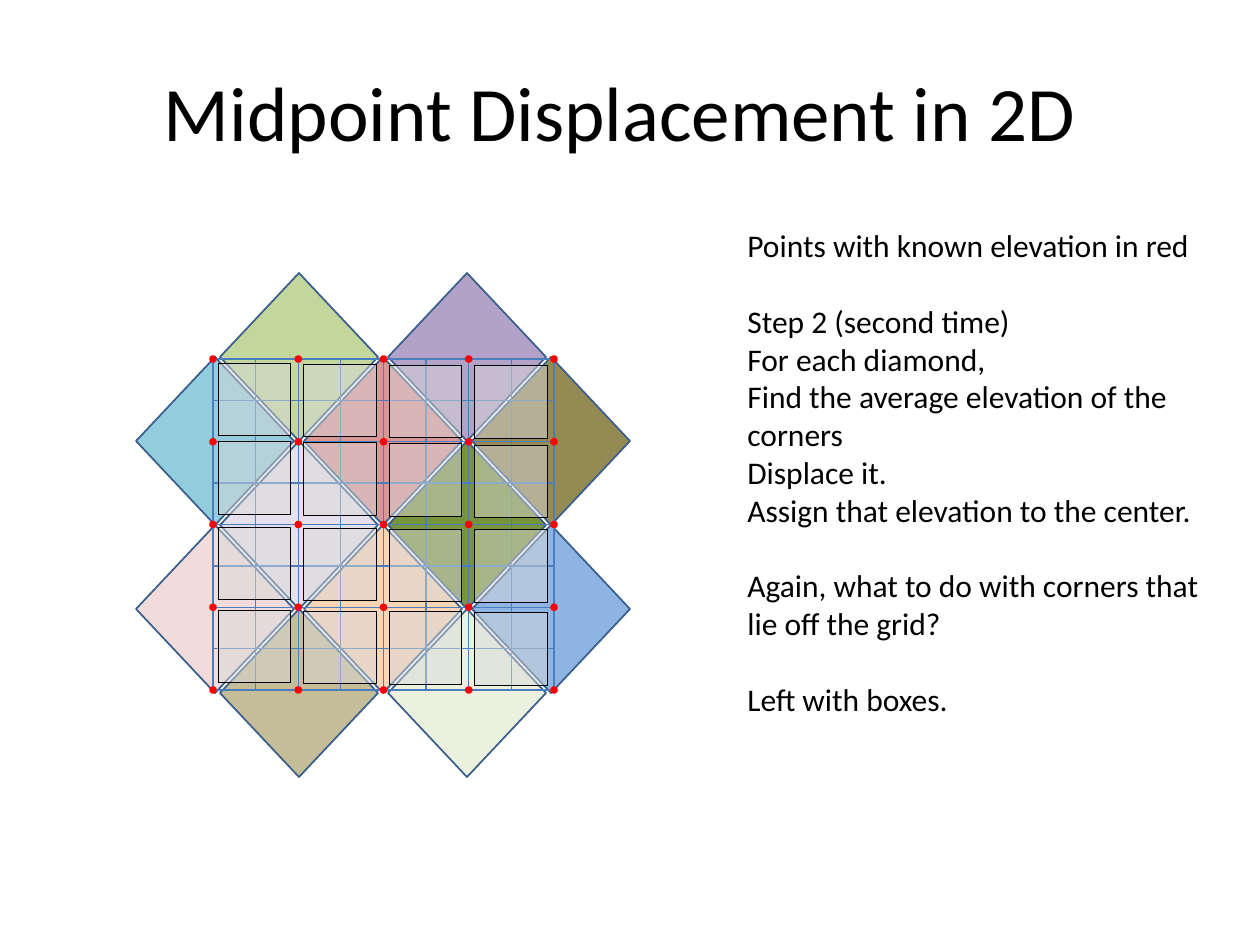
from itertools import product

from lxml.etree import SubElement
from pptx import Presentation
from pptx.dml.color import RGBColor
from pptx.enum.shapes import MSO_CONNECTOR, MSO_SHAPE
from pptx.enum.text import MSO_ANCHOR, MSO_AUTO_SIZE, PP_ALIGN
from pptx.oxml.ns import qn
from pptx.util import Emu, Pt

EMU_PER_PX = 914400 / 126
FONT = "Calibri"
COLORS = {
    "text": "000000",
    "diamond_line": "3A5F8C",
    "grid": "4B7EBC",
    "known": "FF0000",
    "box": "D9D9D9",
    "box_line": "000000",
}

# Column, row and fill of each diamond, from back to front
DIAMONDS = [
    (3, 2, "77933C"), (4, 1, "948A54"), (4, 3, "8EB4E3"), (3, 0, "B3A2C7"),
    (1, 2, "E6E0EC"), (3, 4, "EBF1DE"), (2, 3, "FCD5B5"), (1, 4, "C4BD97"),
    (0, 3, "F2DCDB"), (0, 1, "93CDDD"), (1, 0, "C3D69B"), (2, 1, "D99694"),
]
DIAMOND_LEFT, DIAMOND_TOP, DIAMOND_STEP = 136, 273, 84
DIAMOND_W, DIAMOND_H = 158, 168

GRID_LEFT, GRID_TOP, GRID_RIGHT, GRID_BOTTOM = 213, 359, 554, 690
GRID_CELLS = 8
DOT = 4
BOX = 73
BOX_LEFTS = (218, 304, 389, 475)
BOX_TOPS = (363, 442, 527, 610)

# Each block is set apart from the one before it by one line
STEP_BLOCKS = [
    ["Points with known elevation in red"],
    ["Step 2 (second time)", "For each diamond,",
     "Find the average elevation of the corners", "Displace it.",
     "Assign that elevation to the center."],
    ["Again, what to do with corners that lie off the grid?"],
    ["Left with boxes."],
]


def px(n):
    return Emu(round(n * EMU_PER_PX))


def rgb(color):
    return RGBColor.from_string(color)


def add_shape(shapes, kind, x, y, w, h, fill, line, line_pt, alpha=None):
    """Add a preset shape; alpha is the opacity of its fill in percent."""
    sp = shapes.add_shape(kind, px(x), px(y), px(w), px(h))
    sp.shadow.inherit = False
    sp.fill.solid()
    sp.fill.fore_color.rgb = rgb(fill)
    sp.line.color.rgb = rgb(line)
    sp.line.width = Pt(line_pt)
    if alpha is not None:
        clr = sp._element.spPr.find(qn("a:solidFill")).find(qn("a:srgbClr"))
        SubElement(clr, qn("a:alpha"), val=str(alpha * 1000))


def add_line(shapes, x1, y1, x2, y2):
    ln = shapes.add_connector(MSO_CONNECTOR.STRAIGHT, px(x1), px(y1), px(x2), px(y2))
    ln.line.color.rgb = rgb(COLORS["grid"])
    ln.line.width = Pt(0.75)
    SubElement(ln._element.spPr, qn("a:effectLst"))


def add_text_frame(s, x, y, w, h):
    tf = s.shapes.add_textbox(px(x), px(y), px(w), px(h)).text_frame
    tf.word_wrap = True
    return tf


def write(p, text, size):
    p.text = text
    font = p.runs[0].font
    font.name, font.size = FONT, Pt(size)
    font.color.rgb = rgb(COLORS["text"])


def add_title(s):
    tf = add_text_frame(s, 53, 32, 1134, 157)
    tf.vertical_anchor = MSO_ANCHOR.MIDDLE
    p = tf.paragraphs[0]
    write(p, "Midpoint Displacement in 2D", 44)
    p.alignment = PP_ALIGN.CENTER


def add_steps(s):
    tf = add_text_frame(s, 735, 220, 504, 509)
    tf.auto_size = MSO_AUTO_SIZE.SHAPE_TO_FIT_TEXT
    p = tf.paragraphs[0]
    for b, block in enumerate(STEP_BLOCKS):
        for i, text in enumerate(block):
            if b or i:
                p = tf.add_paragraph()
            write(p, text, 18)
            if b and i == 0:
                p.space_before = Pt(21.6)


def add_diamonds(s):
    for col, row, fill in DIAMONDS:
        add_shape(s.shapes, MSO_SHAPE.DIAMOND, DIAMOND_LEFT + col * DIAMOND_STEP,
                  DIAMOND_TOP + row * DIAMOND_STEP, DIAMOND_W, DIAMOND_H,
                  fill, COLORS["diamond_line"], 1)


def add_grid(s):
    """Grid lines, with a known point on every second crossing."""
    shapes = s.shapes.add_group_shape().shapes
    xs = [GRID_LEFT + i * (GRID_RIGHT - GRID_LEFT) / GRID_CELLS
          for i in range(GRID_CELLS + 1)]
    ys = [GRID_TOP + i * (GRID_BOTTOM - GRID_TOP) / GRID_CELLS
          for i in range(GRID_CELLS + 1)]
    for y in ys:
        add_line(shapes, GRID_LEFT, y, GRID_RIGHT, y)
    for x in xs:
        add_line(shapes, x, GRID_BOTTOM, x, GRID_TOP)
    for y, x in product(ys[::2], xs[::2]):
        add_shape(shapes, MSO_SHAPE.OVAL, x - DOT / 2, y - DOT / 2, DOT, DOT,
                  COLORS["known"], COLORS["known"], 2)


def add_boxes(s):
    for top, (col, left) in product(BOX_TOPS, enumerate(BOX_LEFTS)):
        add_shape(s.shapes, MSO_SHAPE.RECTANGLE, left, top + col, BOX, BOX,
                  COLORS["box"], COLORS["box_line"], 0.5, alpha=49)


def main():
    prs = Presentation()
    prs.slide_width, prs.slide_height = px(1260), px(945)
    s = prs.slides.add_slide(prs.slide_layouts[6])
    add_diamonds(s)
    add_title(s)
    add_steps(s)
    add_grid(s)
    add_boxes(s)
    prs.save("out.pptx")


if __name__ == "__main__":
    main()
